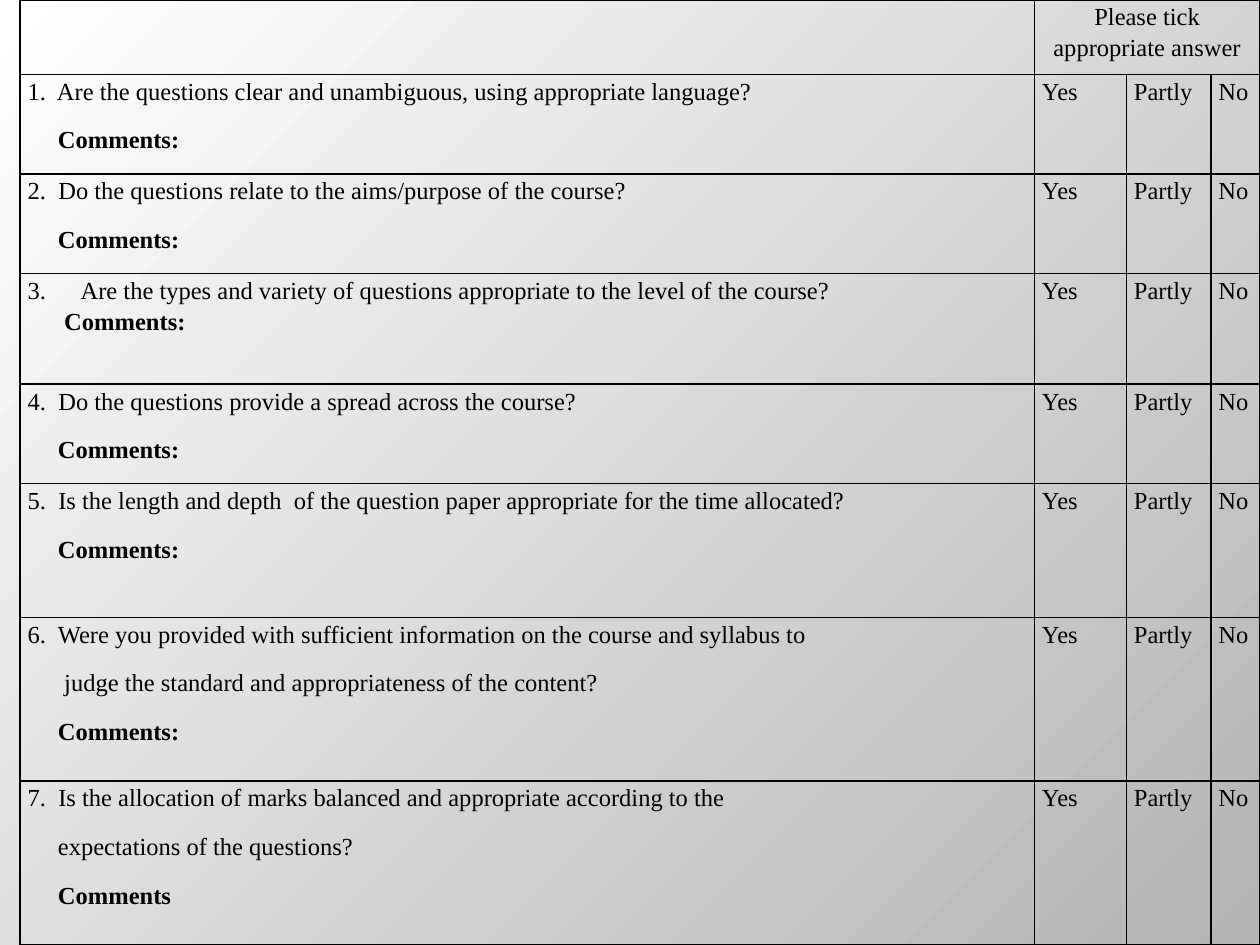
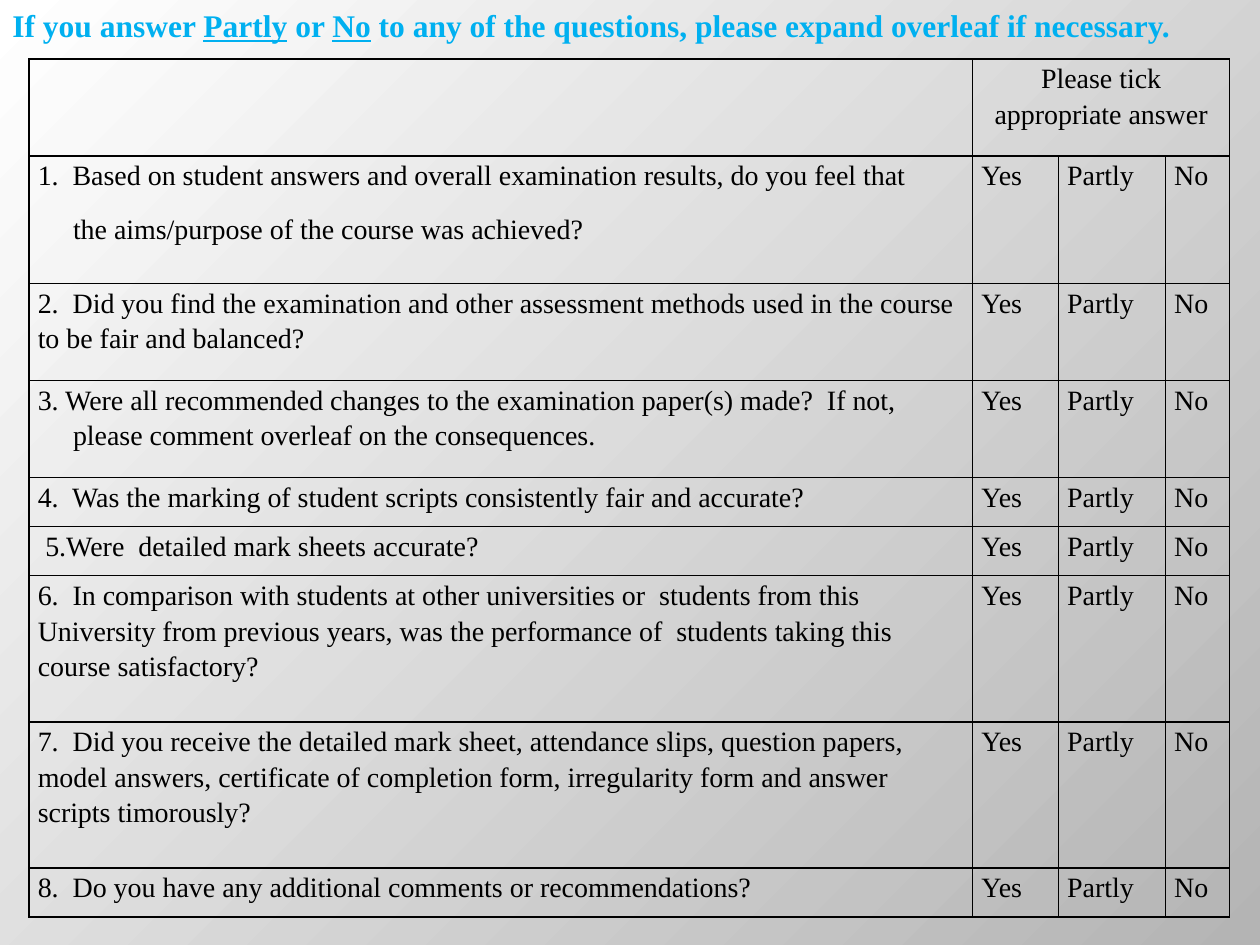
import pptx
import pptx.util
import pptx.dml.color
import pptx.enum.text
import pptx.oxml
import pptx.oxml.ns
from lxml import etree

# Content: each question is (row height, lines); a line is (text, indent, *traits)
COLORS = {"ink": "000000", "notice": "00B0F0", "light": "FFFFFF", "dark": "B4B4B4"}
FONT = "Times New Roman"
HEADING = "Please tick appropriate answer"
ANSWERS = ["Yes", "Partly", "No"]
NOTICE = [("If you answer ", False), ("Partly", True), (" or ", False), ("No", True),
          (" to any of the questions, please expand overleaf if necessary.", False)]
COMMENTS = ("Comments:", 0.24, "bold")

PAPER_REVIEW = {
    "corner": (0.16, 0), "columns": [8.05, 0.73, 0.67, 0.39],
    "heading_height": 0.59, "size": 14, "inset": 0.06,
    "questions": [
        (0.79, [("1.  Are the questions clear and unambiguous, using appropriate language?", 0),
                COMMENTS]),
        (0.79, [("2.  Do the questions relate to the aims/purpose of the course?", 0), COMMENTS]),
        (0.88, [("Are the types and variety of questions appropriate to the level of the course?",
                 0.42, "numbered", "tight"),
                ("Comments:", 0.29, "bold")]),
        (0.79, [("4.  Do the questions provide a spread across the course?", 0), COMMENTS]),
        (1.06, [("5.  Is the length and depth  of the question paper appropriate for the time allocated?", 0),
                COMMENTS]),
        (1.3, [("6.  Were you provided with sufficient information on the course and syllabus to", 0),
               ("judge the standard and appropriateness of the content?", 0.29), COMMENTS]),
        (1.3, [("7.  Is the allocation of marks balanced and appropriate according to the", 0),
               ("expectations of the questions?", 0.24), ("Comments", 0.24, "bold")]),
    ],
}

RESULTS_REVIEW = {
    "corner": (0.23, 0.47), "columns": [7.49, 0.68, 0.85, 0.51],
    "heading_height": 0.77, "size": 16, "inset": 0.07,
    "questions": [
        (1.01, [("1.  Based on student answers and overall examination results, do you feel that", 0),
                ("the aims/purpose of the course was achieved?", 0.28)]),
        (0.77, [("2.  Did you find the examination and other assessment methods used in the course "
                 "to be fair and balanced?", 0)]),
        (0.77, [("3. Were all recommended changes to the examination paper(s) made?  If not,", 0, "tight"),
                ("please comment overleaf on the consequences.", 0.28)]),
        (0.39, [("4.  Was the marking of student scripts consistently fair and accurate?", 0)]),
        (0.39, [("5.Were  detailed mark sheets accurate?", 0.06)]),
        (1.16, [("6.  In comparison with students at other universities or  students from this "
                 "University from previous years, was the performance of  students taking this "
                 "course satisfactory?", 0)]),
        (1.16, [("7.  Did you receive the detailed mark sheet, attendance slips, question papers, "
                 "model answers, certificate of completion form, irregularity form and answer "
                 "scripts timorously?", 0)]),
        (0.39, [("8.  Do you have any additional comments or recommendations?", 0)]),
    ],
}

inches = pptx.util.Inches
NAMESPACE = pptx.oxml.ns.nsdecls("a")


def rgb(name):
    return pptx.dml.color.RGBColor.from_string(COLORS[name])


def style_run(span, size, color, bold=False):
    span.font.name = FONT
    span.font.size = pptx.util.Pt(size)
    span.font.bold = bold
    span.font.color.rgb = rgb(color)


def paint_background(master):
    """Gradient spreading from the top left corner."""
    fill = master.background.fill
    fill.gradient()
    for stop, name, position in zip(fill.gradient_stops, ("light", "dark"), (0, 1)):
        stop.color.rgb = rgb(name)
        stop.position = position
    gradient = master.element.xpath(".//p:bg//a:gradFill")[0]
    for line in gradient.findall(pptx.oxml.ns.qn("a:lin")):
        gradient.remove(line)
    gradient.append(pptx.oxml.parse_xml(
        f'<a:path {NAMESPACE} path="circle"><a:fillToRect r="100000" b="100000"/></a:path>'))


def frame_cell(cell, inset):
    properties = cell._tc.get_or_add_tcPr()
    for side in ("lnL", "lnR", "lnT", "lnB"):
        properties.append(pptx.oxml.parse_xml(
            f'<a:{side} {NAMESPACE} w="12700"><a:solidFill>'
            f'<a:srgbClr val="{COLORS["ink"]}"/></a:solidFill></a:{side}>'))
    cell.fill.background()
    cell.margin_left = cell.margin_right = inches(inset)
    cell.margin_top = cell.margin_bottom = 0


def write_cell(cell, lines, size, number=1):
    cell.text_frame.text = "\n".join(line[0] for line in lines)
    for para, (_, indent, *traits) in zip(cell.text_frame.paragraphs, lines):
        para.line_spacing = 1.15
        para.space_after = pptx.util.Pt(0 if "tight" in traits else 10)
        if "centred" in traits:
            para.alignment = pptx.enum.text.PP_ALIGN.CENTER
        properties = para._p.get_or_add_pPr()
        properties.set("marL", str(inches(indent)))
        if "numbered" in traits:
            properties.set("indent", str(-inches(indent)))
            numbering = etree.SubElement(properties, pptx.oxml.ns.qn("a:buAutoNum"))
            numbering.set("type", "arabicPeriod")
            numbering.set("startAt", str(number))
        style_run(para.runs[0], size, "ink", "bold" in traits)


def add_form(page, form):
    heights = [form["heading_height"]] + [height for height, _ in form["questions"]]
    left, top = form["corner"]
    table = page.shapes.add_table(
        len(heights), len(form["columns"]), inches(left), inches(top),
        inches(sum(form["columns"])), inches(sum(heights))).table
    table.first_row = table.horz_banding = False
    for column, width in zip(table.columns, form["columns"]):
        column.width = inches(width)
    for row, height in zip(table.rows, heights):
        row.height = inches(height)
    for cell in table.iter_cells():
        frame_cell(cell, form["inset"])

    # Heading over the three answer columns
    table.cell(0, 1).merge(table.cell(0, 3))
    write_cell(table.cell(0, 1), [(HEADING, 0, "centred")], form["size"])

    # Questions with their answers
    for number, (_, lines) in enumerate(form["questions"], 1):
        write_cell(table.cell(number, 0), lines, form["size"], number)
        for column, answer in enumerate(ANSWERS, 1):
            write_cell(table.cell(number, column), [(answer, 0)], form["size"])


def add_notice(page):
    box = page.shapes.add_textbox(0, 0, inches(9.48), inches(0.71))
    box.text_frame.word_wrap = False
    para = box.text_frame.paragraphs[0]
    for text, underlined in NOTICE:
        span = para.add_run()
        span.text = text
        style_run(span, 18, "notice", bold=True)
        span.font.underline = underlined


def main():
    deck = pptx.Presentation()
    deck.slide_width, deck.slide_height = inches(10), inches(7.5)
    paint_background(deck.slide_master)
    pages = []
    for form in (PAPER_REVIEW, RESULTS_REVIEW):
        page = deck.slides.add_slide(deck.slide_layouts[6])
        add_form(page, form)
        pages.append(page)
    add_notice(pages[1])
    deck.save("out.pptx")


if __name__ == "__main__":
    main()
